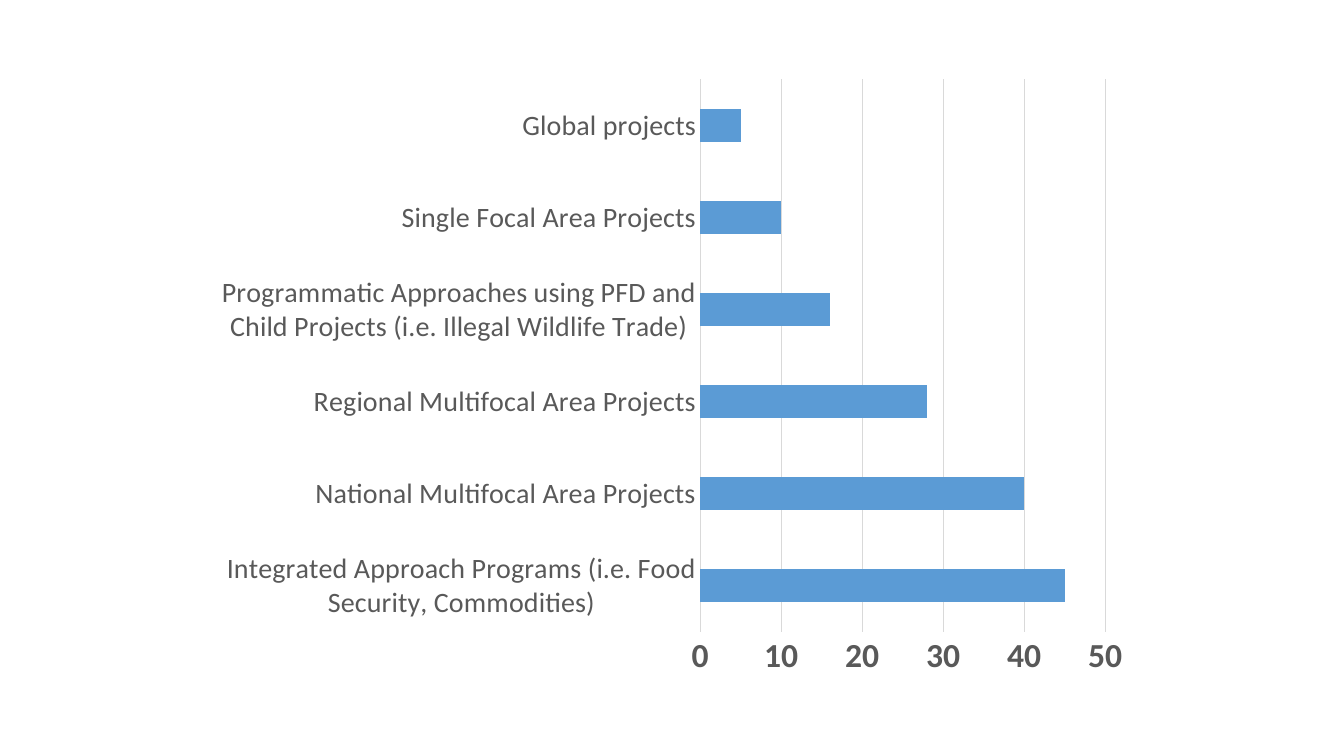
from pptx import Presentation
from pptx.chart.data import CategoryChartData
from pptx.dml.color import RGBColor
from pptx.enum.chart import XL_CHART_TYPE as ChartType, XL_TICK_MARK as TickMark
from pptx.util import Pt

PX = 9071  # EMU per px, at 100.8 px to the inch
COLORS = {"bar": "5B9BD5", "label": "595959", "line": "D9D9D9", "text": "000000"}
PROJECTS = {
    "Integrated Approach Programs (i.e. Food Security, Commodities)": 45,
    "National Multifocal Area Projects": 40,
    "Regional Multifocal Area Projects": 28,
    "Programmatic Approaches using PFD and Child Projects (i.e. Illegal Wildlife Trade)": 16,
    "Single Focal Area Projects": 10,
    "Global projects": 5,
}


def style_font(font, size, color, bold=False):
    font.name = "Calibri"
    font.size = Pt(size)
    font.bold = bold
    font.color.rgb = RGBColor.from_string(COLORS[color])


def style_line(line):
    line.color.rgb = RGBColor.from_string(COLORS["line"])
    line.width = Pt(0.75)


prs = Presentation()
prs.slide_width, prs.slide_height = 1344 * PX, 756 * PX
slide = prs.slides.add_slide(prs.slide_layouts[6])

project_data = CategoryChartData()
project_data.categories = list(PROJECTS)
project_data.add_series("Series 1", list(PROJECTS.values()))
chart = slide.shapes.add_chart(
    ChartType.BAR_CLUSTERED, 203 * PX, 67 * PX, 938 * PX, 622 * PX, project_data
).chart
chart.has_title = False
chart.has_legend = False
style_font(chart.font, 10, "text")

plot = chart.plots[0]
plot.gap_width = 182
plot.vary_by_categories = False
bars = plot.series[0].format.fill
bars.solid()
bars.fore_color.rgb = RGBColor.from_string(COLORS["bar"])

projects, values = chart.category_axis, chart.value_axis
for axis in (projects, values):
    axis.major_tick_mark = TickMark.NONE
    axis.minor_tick_mark = TickMark.NONE
style_font(projects.tick_labels.font, 20, "label")
style_line(projects.format.line)

style_font(values.tick_labels.font, 24, "label", bold=True)
values.minimum_scale, values.maximum_scale, values.major_unit = 0, 50, 10
values.format.line.fill.background()
values.has_major_gridlines = True
style_line(values.major_gridlines.format.line)

prs.save("out.pptx")
